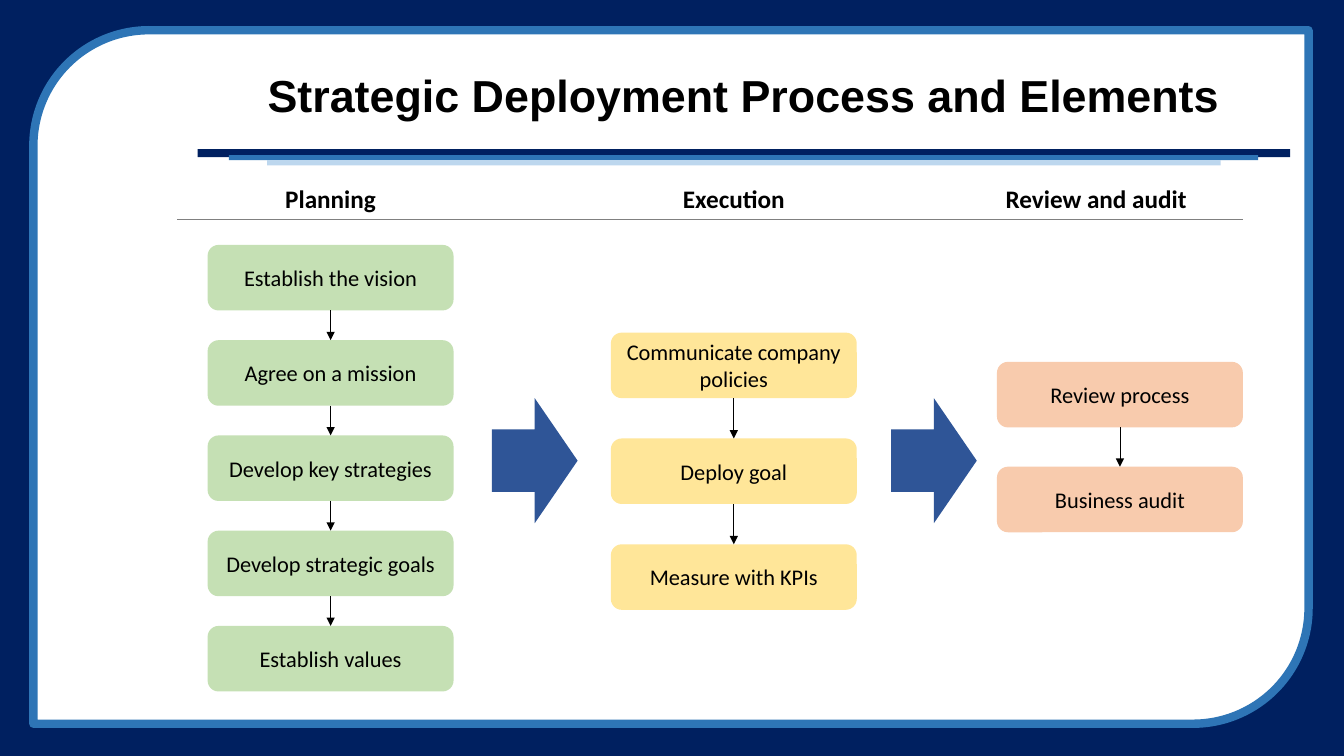
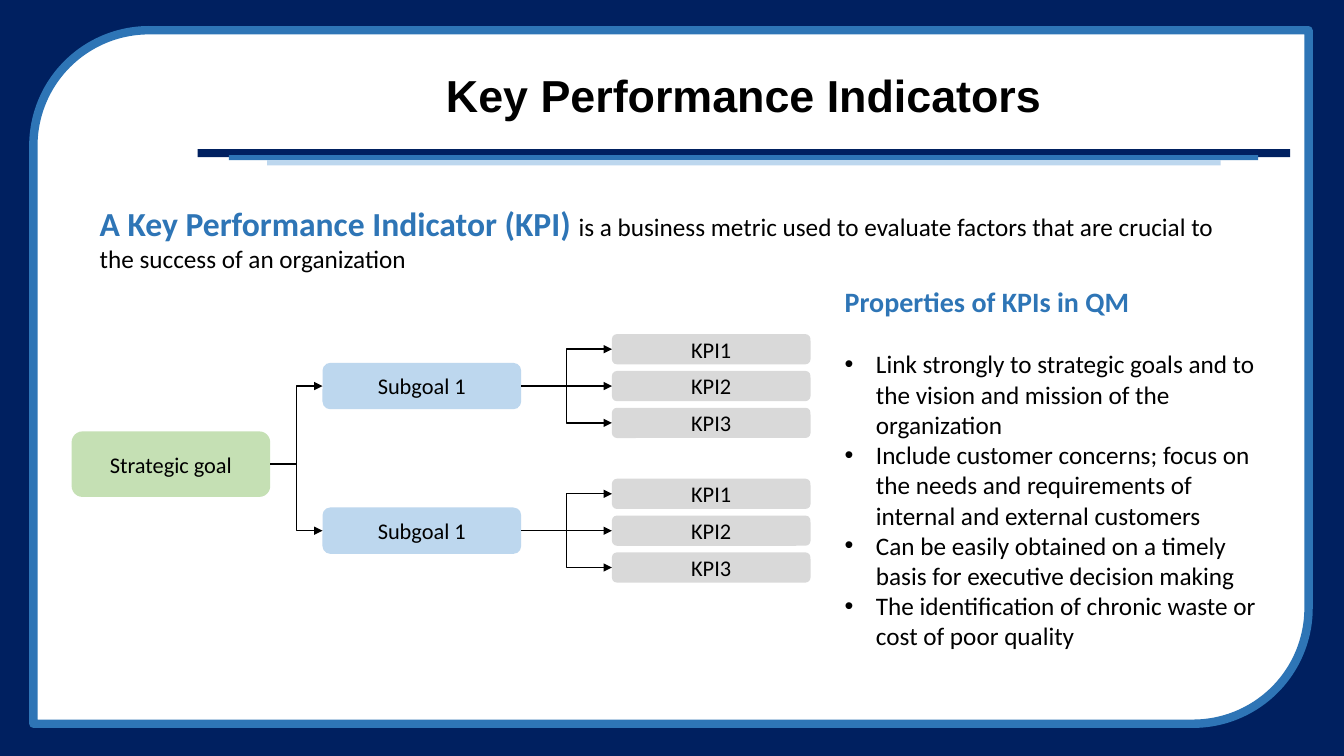
from pptx import Presentation
from pptx.dml.color import RGBColor
from pptx.enum.shapes import MSO_CONNECTOR, MSO_SHAPE
from pptx.enum.text import MSO_ANCHOR, MSO_AUTO_SIZE, PP_ALIGN
from pptx.oxml.ns import qn
from pptx.util import Inches, Pt
from lxml import etree

SLIDE_WIDTH, SLIDE_HEIGHT = Inches(13.33), Inches(7.5)

# Palette
NAVY, BLUE, PALE_BLUE, ARROW_BLUE = "002060", "2E75B6", "BDD7EE", "2F5597"
GREEN, YELLOW, ORANGE = "C5E0B4", "FFE699", "F8CBAD"
GRAY, RULE_GRAY, BLACK, WHITE = "D9D9D9", "808080", "000000", "FFFFFF"

# Connection sites of a rounded rectangle
TOP, LEFT, BOTTOM, RIGHT = range(4)

# Common sizes, in percent of the slide
STEP_WIDTH, STEP_HEIGHT = 18.3, 8.67
NODE_WIDTH = 14.78


def color(value):
    return RGBColor.from_string(value)


def across(percent):
    return round(SLIDE_WIDTH * percent / 100)


def down(percent):
    return round(SLIDE_HEIGHT * percent / 100)


def area(left, top, width, height):
    """Turn percent of the slide into lengths."""
    return across(left), down(top), across(width), down(height)


def place(shape, *percents):
    shape.left, shape.top, shape.width, shape.height = area(*percents)


def write(paragraph, text, size=16, font="Calibri", ink=BLACK, bold=False,
          align=None):
    """Append one formatted run to a paragraph."""
    run = paragraph.add_run()
    run.text = text
    run.font.size = Pt(size)
    run.font.name = font
    run.font.bold = bold
    run.font.color.rgb = color(ink)
    if align is not None:
        paragraph.alignment = align


def add_block(slide, kind, percents, fill, text=None, outline=None):
    shape = slide.shapes.add_shape(kind, *area(*percents))
    shape.shadow.inherit = False
    shape.fill.solid()
    shape.fill.fore_color.rgb = color(fill)
    if outline:
        shape.line.color.rgb = color(outline)
        shape.line.width = Pt(6)
    else:
        shape.line.fill.background()
    if text:
        shape.text_frame.word_wrap = True
        shape.text_frame.vertical_anchor = MSO_ANCHOR.MIDDLE
        write(shape.text_frame.paragraphs[0], text, align=PP_ALIGN.CENTER)
    return shape


def add_node(slide, left, center, height, fill, text):
    """Tree node centered on a height of the slide."""
    percents = (left, center - height / 2, NODE_WIDTH, height)
    return add_block(slide, MSO_SHAPE.ROUNDED_RECTANGLE, percents, fill, text)


def add_text(slide, *percents):
    """Text box; returns its first paragraph."""
    frame = slide.shapes.add_textbox(*area(*percents)).text_frame
    frame.word_wrap = True
    return frame.paragraphs[0]


def add_line(slide, start, end, kind=MSO_CONNECTOR.STRAIGHT, ink=BLACK,
             width=0.5, arrow=False):
    connector = slide.shapes.add_connector(kind, *start, *end)
    connector.line.color.rgb = color(ink)
    connector.line.width = Pt(width)
    properties = connector._element.spPr
    if arrow:
        line = properties.find(qn("a:ln"))
        etree.SubElement(line, qn("a:tailEnd"), type="triangle")
    etree.SubElement(properties, qn("a:effectLst"))
    return connector


def site(shape, side):
    """Middle of one side of a shape."""
    middle_x = shape.left + shape.width // 2
    middle_y = shape.top + shape.height // 2
    return {TOP: (middle_x, shape.top), LEFT: (shape.left, middle_y),
            BOTTOM: (middle_x, shape.top + shape.height),
            RIGHT: (shape.left + shape.width, middle_y)}[side]


def join(slide, source, target, sides, width):
    """Arrow glued to two shapes, bent where they are not in line."""
    start, end = site(source, sides[0]), site(target, sides[1])
    aligned = min(abs(start[0] - end[0]), abs(start[1] - end[1])) < Pt(1)
    kind = MSO_CONNECTOR.STRAIGHT if aligned else MSO_CONNECTOR.ELBOW
    connector = add_line(slide, start, end, kind, width=width, arrow=True)
    connector.begin_connect(source, sides[0])
    connector.end_connect(target, sides[1])


def set_bullet(paragraph, indent=0.31):
    properties = paragraph._p.get_or_add_pPr()
    properties.set("marL", str(Inches(indent)))
    properties.set("indent", str(-Inches(indent)))
    etree.SubElement(properties, qn("a:buFont"), typeface="Arial")
    etree.SubElement(properties, qn("a:buChar"), char="•")


def clear_bullet(paragraph):
    properties = paragraph._p.get_or_add_pPr()
    properties.set("marL", "0")
    properties.set("indent", "0")
    etree.SubElement(properties, qn("a:buNone"))


def build_master(master, slide):
    """Draw the frame and title bars, then hand them to the master."""
    master.background.fill.solid()
    master.background.fill.fore_color.rgb = color(NAVY)
    pieces = [add_block(slide, MSO_SHAPE.ROUND_2_DIAG_RECTANGLE,
                        (2.48, 4, 94.88, 91.73), WHITE, outline=BLUE)]
    bars = [(14.7, 19.73, 81.3, 1.07, NAVY), (17.03, 20.53, 76.58, 0.67, BLUE),
            (19.88, 21.2, 70.95, 0.67, PALE_BLUE)]
    for *percents, fill in bars:
        pieces.append(add_block(slide, MSO_SHAPE.RECTANGLE, percents, fill))
    for position, piece in enumerate(pieces, 2):
        piece._element.nvSpPr.cNvPr.set("id", str(100 + position))
        master.shapes._spTree.insert(position, piece._element)


def set_title(slide, text):
    title = slide.shapes.title
    place(title, 14.7, 6.53, 81.3, 12.93)
    frame = title.text_frame
    frame.auto_size = MSO_AUTO_SIZE.NONE
    frame.vertical_anchor = MSO_ANCHOR.MIDDLE
    frame.paragraphs[0].line_spacing = 0.9
    write(frame.paragraphs[0], text, size=32, font="Arial", bold=True,
          align=PP_ALIGN.CENTER)


def build_process(slide):
    set_title(slide, "Strategic Deployment Process and Elements")

    # Phase: heading, heading left, steps left, first top, pitch, fill, steps
    phases = [
        ("Planning", 15.45, 15.45, 32.4, 12.6, GREEN,
         ["Establish the vision", "Agree on a mission",
          "Develop key strategies", "Develop strategic goals",
          "Establish values"]),
        ("Execution", 45.45, 45.45, 44, 14, YELLOW,
         ["Communicate company policies", "Deploy goal",
          "Measure with KPIs"]),
        ("Review and audit", 72.41, 74.18, 47.87, 13.87, ORANGE,
         ["Review process", "Business audit"]),
    ]
    for heading, heading_left, left, first_top, pitch, fill, steps in phases:
        write(add_text(slide, heading_left, 23.6, STEP_WIDTH, 5.33), heading,
              size=18, bold=True, align=PP_ALIGN.CENTER)
        boxes = [add_block(slide, MSO_SHAPE.ROUNDED_RECTANGLE,
                           (left, first_top + row * pitch,
                            STEP_WIDTH, STEP_HEIGHT), fill, step)
                 for row, step in enumerate(steps)]
        for upper, lower in zip(boxes, boxes[1:]):
            join(slide, upper, lower, (BOTTOM, TOP), width=0.5)

    # Rule under the headings and arrows between the phases
    add_line(slide, (across(13.2), down(29.07)), (across(92.48), down(29.07)),
             ink=RULE_GRAY)
    for left in (36.6, 66.3):
        add_block(slide, MSO_SHAPE.RIGHT_ARROW, (left, 52.67, 6.38, 16.53),
                  ARROW_BLUE)


def build_indicators(slide):
    set_title(slide, "Key Performance Indicators")

    # Definition
    definition = add_text(slide, 6.68, 26.13, 85.58, 10.8)
    write(definition, "A Key Performance Indicator (KPI) ", size=24, ink=BLUE,
          bold=True)
    write(definition, "is a business metric used to evaluate factors that are "
          "crucial to the success of an organization", size=18)

    # Properties list
    body = slide.placeholders[1]
    place(body, 62.1, 36.93, 32.55, 49.87)
    frame = body.text_frame
    frame.auto_size = MSO_AUTO_SIZE.NONE
    heading = frame.paragraphs[0]
    clear_bullet(heading)
    heading.space_before = Pt(0)
    heading.space_after = Pt(22)
    write(heading, "Properties of KPIs in QM", size=20, ink=BLUE, bold=True)
    for text in (
            "Link strongly to strategic goals and to the vision and mission "
            "of the organization",
            "Include customer concerns; focus on the needs and requirements "
            "of internal and external customers",
            "Can be easily obtained on a timely basis for executive decision "
            "making",
            "The identification of chronic waste or cost of poor quality"):
        paragraph = frame.add_paragraph()
        set_bullet(paragraph)
        paragraph.space_before = Pt(0)
        write(paragraph, text, size=18)

    # Goal tree
    goal = add_node(slide, 5.33, 61.4, STEP_HEIGHT, GREEN, "Strategic goal")
    for center in (51.07, 70.2):
        subgoal = add_node(slide, 24, center, 6.13, PALE_BLUE, "Subgoal 1")
        join(slide, goal, subgoal, (RIGHT, LEFT), width=1)
        for number in (1, 2, 3):
            indicator = add_node(slide, 45.53, center + (number - 2) * 4.87, 4,
                                 GRAY, f"KPI{number}")
            join(slide, subgoal, indicator, (RIGHT, LEFT), width=1)


def main():
    presentation = Presentation()
    presentation.slide_width = SLIDE_WIDTH
    presentation.slide_height = SLIDE_HEIGHT
    layouts = presentation.slide_layouts
    process = presentation.slides.add_slide(layouts.get_by_name("Title Only"))
    indicators = presentation.slides.add_slide(
        layouts.get_by_name("Title and Content"))
    build_master(presentation.slide_master, process)
    build_process(process)
    build_indicators(indicators)
    presentation.save("out.pptx")


if __name__ == "__main__":
    main()
